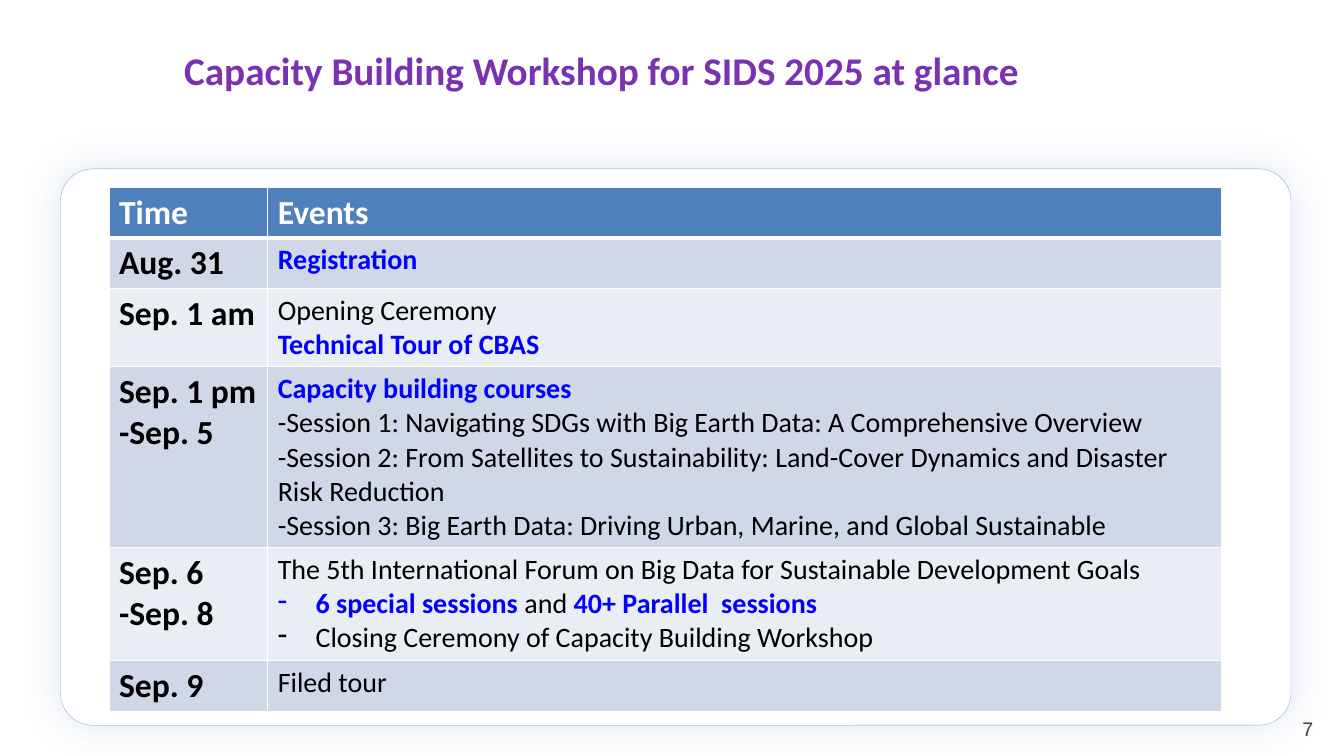
"""Build the workshop timetable slide for SIDS 2025."""
from lxml import etree
from pptx import Presentation, util as u
from pptx.dml.color import RGBColor
from pptx.enum import shapes, text
from pptx.oxml import parse_xml
from pptx.oxml.ns import nsdecls, qn

WHITE = RGBColor(0xFF, 0xFF, 0xFF)
BLACK = RGBColor(0, 0, 0)
BLUE = RGBColor(0, 0, 0xFF)
PURPLE = RGBColor(0x7B, 0x32, 0xB2)
GREY = RGBColor(0x40, 0x40, 0x40)
NAVY = RGBColor(0x00, 0x44, 0xA8)
HEADER = RGBColor(0x4F, 0x81, 0xBD)
BANDS = [RGBColor(0xD0, 0xD8, 0xE8), RGBColor(0xE9, 0xED, 0xF4)]

SCHEDULE = [
    (36, ["Time"], ["Events"]),
    (36, ["Aug. 31"], ["*Registration"]),
    (56, ["Sep. 1 am"], ["Opening Ceremony", "*Technical Tour of CBAS"]),
    (129, ["Sep. 1 pm", "-Sep. 5"], [
        "*Capacity building courses",
        "-Session 1: Navigating SDGs with Big Earth Data: A Comprehensive Overview",
        "-Session 2: From Satellites to Sustainability: Land-Cover Dynamics and Disaster Risk Reduction",
        "-Session 3: Big Earth Data: Driving Urban, Marine, and Global Sustainable"]),
    (81, ["Sep. 6", "-Sep. 8"], [
        "The 5th International Forum on Big Data for Sustainable Development Goals",
        "•*6 special sessions *and *40+ Parallel  sessions",
        "•Closing Ceremony of Capacity Building Workshop"]),
    (36, ["Sep. 9"], ["Filed tour"]),
]


def style(font, size, color, bold=False, name="Calibri"):
    font.name, font.size, font.bold = name, u.Pt(size), bold
    font.color.rgb = color


def add_label(left, top, width, height, wording):
    box = slide.shapes.add_textbox(u.Pt(left), u.Pt(top), u.Pt(width), u.Pt(height))
    frame = box.text_frame
    frame.word_wrap = True
    frame.vertical_anchor = text.MSO_ANCHOR.MIDDLE
    frame.text = wording
    frame.paragraphs[0].alignment = text.PP_ALIGN.CENTER
    return frame.paragraphs[0]


deck = Presentation()
deck.slide_width, deck.slide_height = u.Pt(960), u.Pt(540)
slide = deck.slides.add_slide(deck.slide_layouts[6])

title = add_label(2.5, 23.8, 854, 51, "Capacity Building Workshop for SIDS 2025 at glance")
title.line_spacing = u.Pt(34.8)
style(title.runs[0].font, 28, PURPLE, True)

page_number = add_label(916.5, 511, 35.5, 19.5, "7")
style(page_number.runs[0].font, 14, GREY, name="Arial")

panel = slide.shapes.add_shape(shapes.MSO_SHAPE.ROUNDED_RECTANGLE,
                               u.Pt(43.2), u.Pt(120.6), u.Pt(879), u.Pt(397.4))
panel.adjustments[0] = 0.058
panel.shadow.inherit = False
panel.fill.solid()
panel.fill.fore_color.rgb = WHITE
panel.line.color.rgb = NAVY
panel.line.width = u.Pt(0.25)
panel_properties = panel.fill._xPr
line_color = panel_properties.find(qn("a:ln")).find(".//" + qn("a:srgbClr"))
etree.SubElement(line_color, qn("a:alpha"), val="45000")
panel_properties.find(qn("a:effectLst")).append(parse_xml(
    f'<a:outerShdw {nsdecls("a")} blurRad="{u.Pt(31)}" dist="0" dir="0" algn="ctr" rotWithShape="0">'
    f'<a:srgbClr val="{NAVY}"><a:alpha val="12000"/></a:srgbClr></a:outerShdw>'))

timetable = slide.shapes.add_table(len(SCHEDULE), 2, u.Pt(77.8), u.Pt(134),
                                   u.Pt(795), u.Pt(374)).table
for column, width in zip(timetable.columns, (113.4, 681.6)):
    column.width = u.Pt(width)

for row, (height, time, events) in enumerate(SCHEDULE):
    timetable.rows[row].height = u.Pt(height)
    for col, lines in enumerate((time, events)):
        cell = timetable.cell(row, col)
        cell_properties = cell._tc.get_or_add_tcPr()
        for side in ("lnL", "lnR", "lnT", "lnB"):
            thick = (row, side) in ((0, "lnB"), (1, "lnT"))
            cell_properties.append(parse_xml(
                f'<a:{side} {nsdecls("a")} w="{u.Pt(3 if thick else 1)}"><a:solidFill>'
                f'<a:srgbClr val="{WHITE}"/></a:solidFill></a:{side}>'))
        cell.fill.solid()
        cell.fill.fore_color.rgb = HEADER if row == 0 else BANDS[(row - 1) % 2]

        heading = row == 0 or col == 0
        for index, line in enumerate(lines):
            frame = cell.text_frame
            paragraph = frame.paragraphs[0] if index == 0 else frame.add_paragraph()
            if line.startswith("•"):
                indent = paragraph._p.get_or_add_pPr()
                indent.set("marL", str(u.Pt(27)))
                indent.set("indent", str(u.Pt(-27)))
                etree.SubElement(indent, qn("a:buFontTx"))
                etree.SubElement(indent, qn("a:buChar"), char="-")
            for part, wording in enumerate(line.lstrip("•").split("*")):
                if not wording:
                    continue
                run = paragraph.add_run()
                run.text = wording
                highlighted = part % 2 == 1
                color = WHITE if row == 0 else BLUE if highlighted else BLACK
                style(run.font, 24 if heading else 20, color, heading or highlighted)

deck.save("out.pptx")
